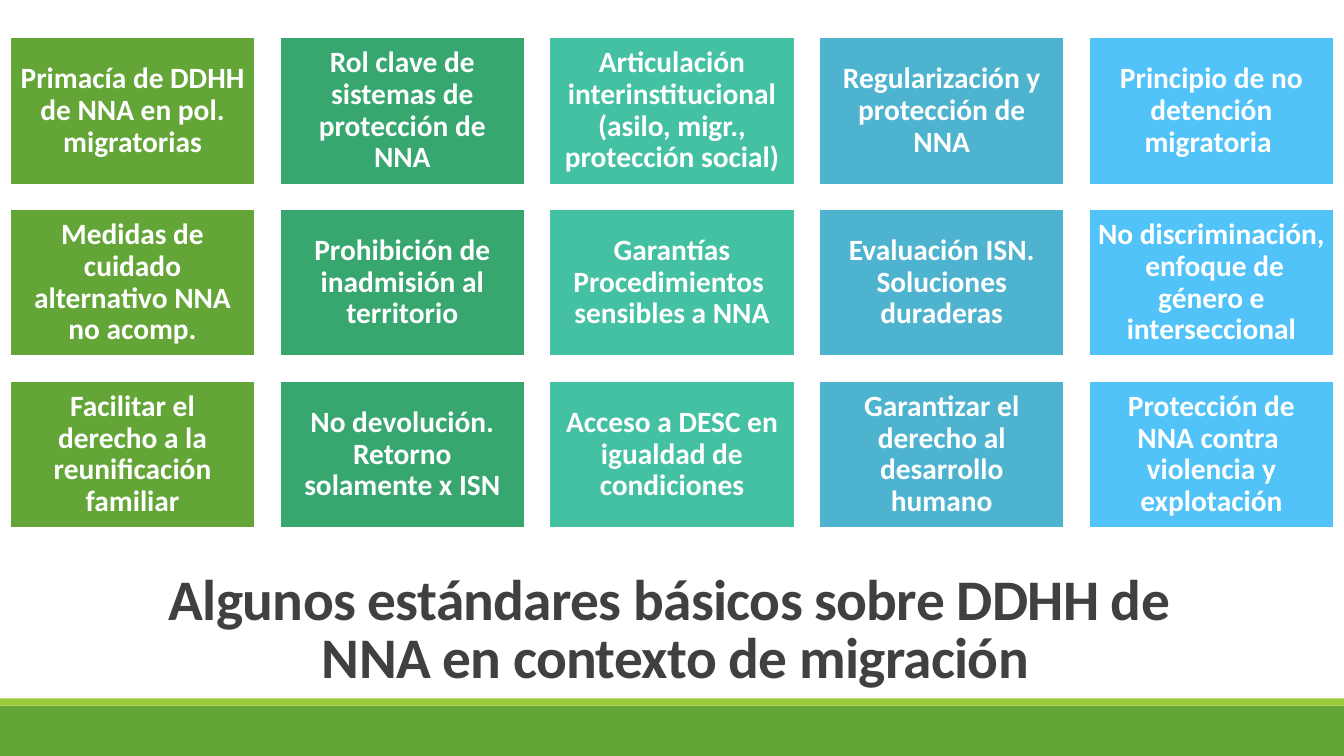
from pptx import Presentation
from pptx import util as u
from pptx.dml.color import RGBColor
from pptx.enum import shapes, text

COLORS = {
    "green": "63A537",
    "emerald": "37A76F",
    "teal": "44C1A3",
    "blue": "4EB3CF",
    "sky": "51C3F9",
    "lime": "99CB38",
    "white": "FFFFFF",
    "dark": "404040",
}
COLUMN_COLORS = ["green", "emerald", "teal", "blue", "sky"]

STANDARDS = [
    ["Primacía de DDHH de NNA en pol. migratorias",
     "Rol clave de sistemas de protección de NNA",
     "Articulación interinstitucional (asilo, migr., protección social)",
     "Regularización y protección de NNA",
     "Principio de no detención migratoria "],
    ["Medidas de cuidado alternativo NNA no acomp.",
     "Prohibición de inadmisión al territorio",
     "Garantías Procedimientos  sensibles a NNA",
     "Evaluación ISN. Soluciones duraderas",
     "No discriminación,  enfoque de género e interseccional"],
    ["Facilitar el derecho a la reunificación familiar",
     "No devolución. Retorno solamente x ISN",
     "Acceso a DESC en igualdad de condiciones",
     "Garantizar el derecho al desarrollo humano",
     "Protección de NNA contra  violencia y explotación"],
]
TITLE = "Algunos estándares básicos sobre DDHH de \vNNA en contexto de migración"


def color(name):
    return RGBColor.from_string(COLORS[name])


def apply(target, values):
    for name, value in values.items():
        setattr(target, name, value)


class SlideBuilder:
    """Holds the text style and the current slide."""

    font = {"name": "Calibri", "bold": True}
    frame = {"word_wrap": True, "auto_size": text.MSO_AUTO_SIZE.NONE,
             "vertical_anchor": text.MSO_ANCHOR.MIDDLE}

    def __init__(self, page):
        self.page = page

    def set_text(self, shape, words, size, ink, spacing, margin):
        box = shape.text_frame
        sides = ("left", "top", "right", "bottom")
        margins = {f"margin_{side}": u.Inches(margin) for side in sides}
        apply(box, {**self.frame, **margins})
        para = box.paragraphs[0]
        para.text = words
        apply(para, {"alignment": text.PP_ALIGN.CENTER, "line_spacing": spacing})
        for span in para.runs:
            apply(span.font, {**self.font, "size": u.Pt(size)})
            span.font.color.rgb = color(ink)
        return para

    def title(self, words, left, top, width, height):
        shape = self.page.shapes.title
        apply(shape, {"left": u.Inches(left), "top": u.Inches(top),
                      "width": u.Inches(width), "height": u.Inches(height)})
        para = self.set_text(shape, words, 41, "dark", 0.85, 0.05)
        for span in para.runs:
            span.font._element.set("spc", "-50")  # tighter letters

    def rectangle(self, fill, left, top, width, height):
        shape = self.page.shapes.add_shape(
            shapes.MSO_SHAPE.RECTANGLE, u.Inches(left), u.Inches(top),
            u.Inches(width), u.Inches(height))
        shape.shadow.inherit = False
        shape.fill.solid()
        shape.fill.fore_color.rgb = color(fill)
        shape.line.fill.background()
        return shape

    def card(self, words, fill, left, top, width, height):
        shape = self.rectangle(fill, left, top, width, height)
        shape.line.color.rgb = color("white")
        shape.line.width = u.Pt(1.25)
        self.set_text(shape, words, 21, "white", 0.9, 0.09)


def main():
    deck = Presentation()
    deck.slide_width, deck.slide_height = u.Inches(13.33), u.Inches(7.5)
    title_only = deck.slide_layouts[5]
    builder = SlideBuilder(deck.slides.add_slide(title_only))

    # Footer bands
    builder.rectangle("green", 0, 7, 13.33, 0.5)
    builder.rectangle("lime", 0, 6.93, 13.33, 0.07)

    # Title
    builder.title(TITLE, 1.2, 5.61, 11, 1.32)

    # Grid of standards, one colour per column
    column_step = (10.8 - 0.1) / 4
    row_step = (3.78 - 0.37) / 2
    for row, standards in enumerate(STANDARDS):
        for column, words in enumerate(standards):
            builder.card(words, COLUMN_COLORS[column],
                         0.1 + column * column_step, 0.37 + row * row_step,
                         2.43, 1.46)

    deck.save("out.pptx")


if __name__ == "__main__":
    main()
